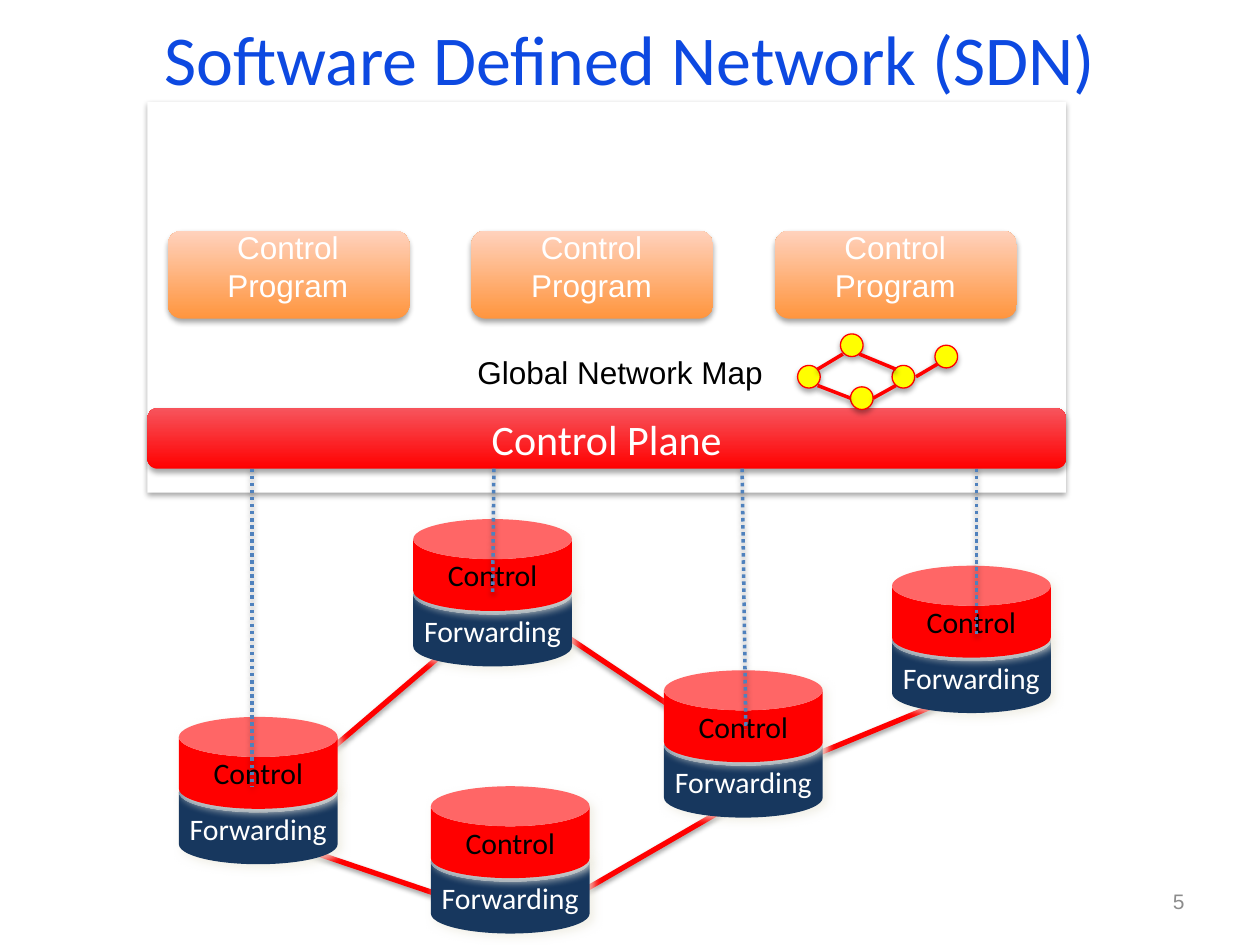
from lxml.etree import SubElement
from pptx import Presentation
from pptx.dml.color import RGBColor
from pptx.enum.dml import MSO_LINE
from pptx.enum.shapes import MSO_CONNECTOR, MSO_SHAPE
from pptx.enum.text import MSO_ANCHOR, PP_ALIGN
from pptx.oxml.ns import qn
from pptx.util import Inches, Pt

RED, NAVY, BLUE, WHITE, BLACK = "FF0000", "17375E", "4F81BD", "FFFFFF", "000000"

# Shadows: colour, opacity %, blur pt, distance pt, angle
SHAPE_SHADOW = (BLACK, 35, 3.1, 1.8, 90)
LINE_SHADOW = (BLACK, 38, 3.1, 1.6, 90)
GLOW = ("EEECE1", 75, 5, 3, 45)

# Left and top of the control half of each switch
SWITCHES = [(1.42, 5.69), (3.42, 6.24), (3.28, 4.12), (5.27, 5.32), (7.08, 4.49)]
SWITCH_SIZE = (1.26, 0.73)
FORWARDING_DROP = 0.44
SWITCH_LINKS = [
    (2.05, 6.44, 3.91, 4.85),
    (4.39, 4.98, 5.6, 5.79),
    (4.49, 7.15, 5.89, 6.34),
    (1.91, 6.57, 3.63, 7.15),
    (6.3, 6.06, 7.61, 5.52),
]
MAP_NODES = [(6.33, 2.9), (6.67, 2.65), (7.08, 2.9), (7.42, 2.74), (6.75, 3.07)]
MAP_LINKS = [
    (6.49, 2.93, 6.69, 2.81),
    (6.75, 3.16, 6.49, 3.06),
    (7.11, 2.93, 6.82, 2.81),
    (6.93, 3.16, 7.11, 3.06),
    (7.27, 2.99, 7.44, 2.89),
]
PLANE_BOTTOM = 3.72
# Start x, end x and end y of the lines from the control plane
CONTROL_LINES = [(2, 2, 6.24), (3.92, 3.91, 4.72), (5.89, 5.92, 5.79), (7.75, 7.75, 5.06)]
PROGRAMS, PROGRAM_LEFT, PROGRAM_STEP = 3, 1.33, 2.41


def rgb(value):
    return RGBColor.from_string(value)


def add_shadow(shape, color, opacity, blur, distance, angle):
    effects = SubElement(shape._element.spPr, qn("a:effectLst"))
    shadow = SubElement(effects, qn("a:outerShdw"), {
        "blurRad": str(Pt(blur)), "dist": str(Pt(distance)),
        "dir": str(angle * 60000), "rotWithShape": "0"})
    tint = SubElement(shadow, qn("a:srgbClr"), val=color)
    SubElement(tint, qn("a:alpha"), val=str(opacity * 1000))


def write(shape, lines, size, color, font="Calibri", align=PP_ALIGN.CENTER,
          anchor=MSO_ANCHOR.MIDDLE, wrap=False):
    frame = shape.text_frame
    frame.word_wrap = wrap
    frame.vertical_anchor = anchor
    for index, line in enumerate(lines):
        para = frame.add_paragraph() if index else frame.paragraphs[0]
        para.alignment = align
        span = para.add_run()
        span.text = line
        span.font.color.rgb = rgb(color)
        for name, value in {"size": Pt(size), "name": font}.items():
            setattr(span.font, name, value)


def add_text(page, place, lines, size, color, **options):
    box = page.shapes.add_textbox(*map(Inches, place))
    write(box, lines, size, color, **options)


def add_block(page, kind, place, fill, shadow=SHAPE_SHADOW, outline=None):
    """Add a preset shape; a pair of colours makes a gradient from bottom to top."""
    shape = page.shapes.add_shape(kind, *map(Inches, place))
    if isinstance(fill, tuple):
        shape.fill.gradient()
        shape.fill.gradient_angle = 90
        for stop, color in zip(shape.fill.gradient_stops, fill):
            stop.color.rgb = rgb(color)
    else:
        shape.fill.solid()
        shape.fill.fore_color.rgb = rgb(fill)
    if outline:
        shape.line.color.rgb = rgb(outline)
        shape.line.width = Pt(0.75)
    else:
        shape.line.fill.background()
    add_shadow(shape, *shadow)
    return shape


def add_line(page, ends, color, width, dash=None):
    line = page.shapes.add_connector(MSO_CONNECTOR.STRAIGHT, *map(Inches, ends))
    line.line.color.rgb = rgb(color)
    line.line.width = Pt(width)
    if dash:
        line.line.dash_style = dash
    add_shadow(line, *LINE_SHADOW)


def add_switch_half(page, left, top, fill, label, color):
    can = add_block(page, MSO_SHAPE.CAN, (left, top, *SWITCH_SIZE), fill, GLOW)
    can.adjustments[0] = 0.436
    write(can, [label], 17, color)


def main():
    deck = Presentation()
    deck.slide_width, deck.slide_height = Inches(10), Inches(7.5)
    page = deck.slides.add_slide(deck.slide_layouts[6])

    add_text(page, (0.5, -0.17, 9, 1.25), ["Software Defined Network (SDN)"],
             40, "0D49E1", wrap=True)

    for ends in SWITCH_LINKS:
        add_line(page, ends, RED, 3)
    for left, top in SWITCHES:
        add_switch_half(page, left, top + FORWARDING_DROP, NAVY, "Forwarding", WHITE)
    for left, top in SWITCHES:
        add_switch_half(page, left, top, RED, "Control", BLACK)

    add_block(page, MSO_SHAPE.RECTANGLE, (1.17, 0.81, 7.29, 3.1), WHITE)
    add_text(page, (3.69, 2.75, 2.49, 0.4), ["Global Network Map"], 18, BLACK,
             font="Arial", align=PP_ALIGN.LEFT, anchor=MSO_ANCHOR.TOP)
    plane = add_block(page, MSO_SHAPE.ROUNDED_RECTANGLE,
                      (1.17, 3.24, 7.29, 0.48), (RED, "F7545C"))
    write(plane, ["Control Plane"], 24, WHITE, wrap=True)

    for left, top in MAP_NODES:
        add_block(page, MSO_SHAPE.OVAL, (left, top, 0.18, 0.18), "FFFF00", outline=RED)
    for ends in MAP_LINKS:
        add_line(page, ends, RED, 2)

    for index in range(PROGRAMS):
        left = PROGRAM_LEFT + index * PROGRAM_STEP
        add_block(page, MSO_SHAPE.ROUNDED_RECTANGLE, (left, 1.83, 1.92, 0.7),
                  ("FF953E", "FFD2BD"))
        add_text(page, (left + 0.37, 1.76, 1.17, 0.71), ["Control", "Program"],
                 18, WHITE, font="Arial", anchor=MSO_ANCHOR.TOP)

    for start, end, bottom in CONTROL_LINES:
        add_line(page, (start, PLANE_BOTTOM, end, bottom), BLUE, 2, MSO_LINE.ROUND_DOT)

    add_text(page, (7.17, 6.95, 2.33, 0.4), ["5"], 12, "8C8C8C",
             font="Arial", align=PP_ALIGN.RIGHT, wrap=True)
    deck.save("out.pptx")


if __name__ == "__main__":
    main()
